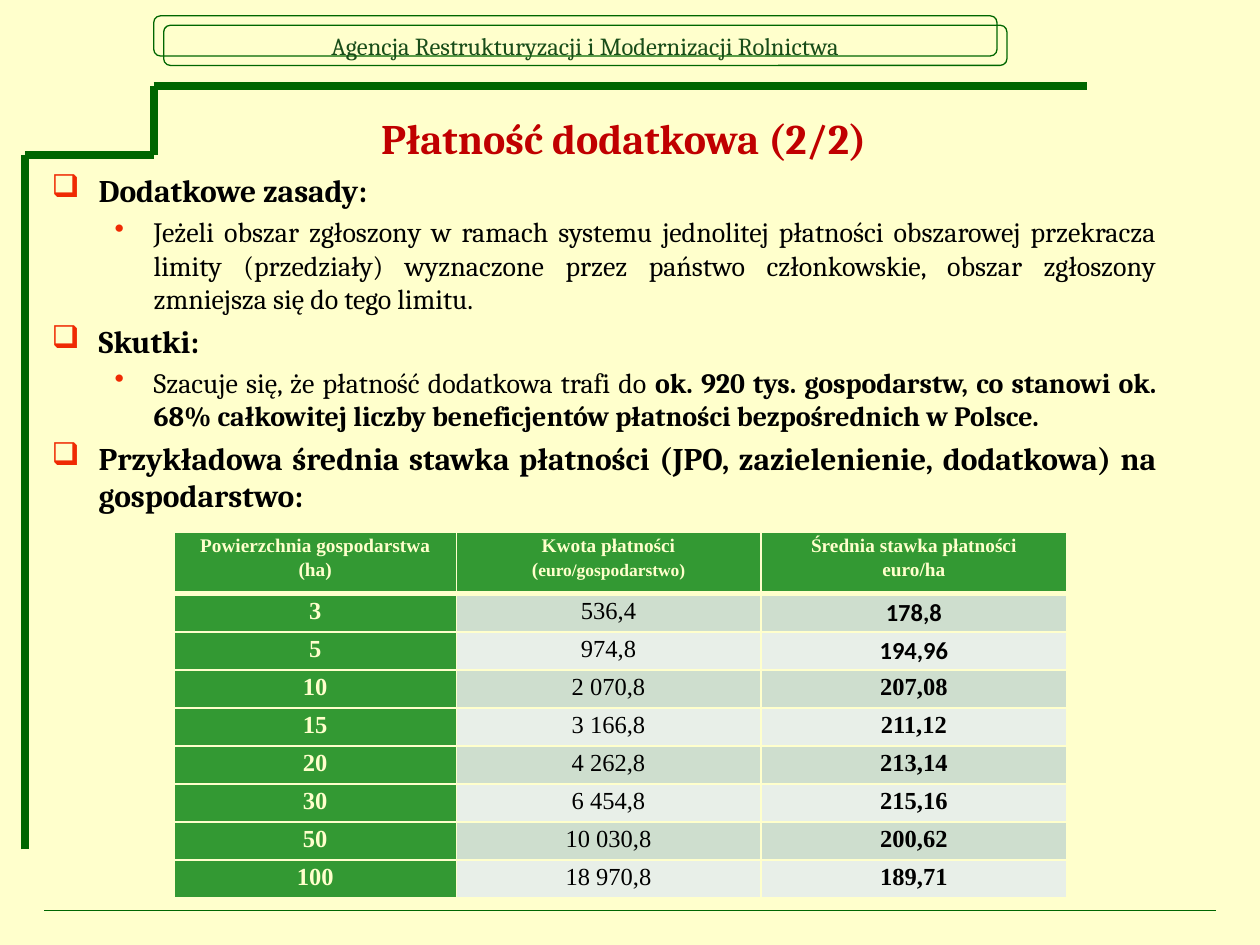
from itertools import pairwise

from lxml.etree import SubElement
from pptx import Presentation
from pptx.dml.color import RGBColor
from pptx.enum.shapes import MSO_CONNECTOR as Conn, MSO_SHAPE as Shape
from pptx.enum.text import MSO_ANCHOR as Anchor, PP_ALIGN as Align
from pptx.oxml.ns import qn
from pptx.util import Cm, Pt

GREEN, CREAM, RED, BLACK = "006600", "FFFFCC", "C00000", "000000"
SERIF, TIMES = "Cambria", "Times New Roman"

# Level: bullet, text indent (cm), hanging part (cm), text size
LEVELS = [("❑", 0.95, 0.95, 18), ("•", 2.06, 0.79, 16)]
# Each point: level, then (text, bold) runs
POINTS = [
    (0, [("Dodatkowe zasady:", True)]),
    (1, [("Jeżeli obszar zgłoszony w ramach systemu jednolitej płatności "
          "obszarowej przekracza limity (przedziały) wyznaczone przez państwo "
          "członkowskie, obszar zgłoszony zmniejsza się do tego limitu.", False)]),
    (0, [("Skutki:", True)]),
    (1, [("Szacuje się, że płatność dodatkowa trafi do ", False),
         ("ok. 920 tys. gospodarstw, co stanowi ok. 68% całkowitej liczby "
          "beneficjentów płatności bezpośrednich w Polsce.", True)]),
    (0, [("Przykładowa średnia stawka płatności (JPO, zazielenienie, "
          "dodatkowa) na gospodarstwo:", True)]),
]
HEADS = [
    [[("Powierzchnia gospodarstwa", 11)], [("(ha)", 11)]],
    [[("Kwota płatności", 11)], [("(", 11), ("euro/gospodarstwo)", 10)]],
    [[("Średnia stawka płatności", 11)], [("euro/ha", 11)]],
]
ROWS = [
    ("3", "536,4", "178,8"), ("5", "974,8", "194,96"),
    ("10", "2 070,8", "207,08"), ("15", "3 166,8", "211,12"),
    ("20", "4 262,8", "213,14"), ("30", "6 454,8", "215,16"),
    ("50", "10 030,8", "200,62"), ("100", "18 970,8", "189,71"),
]


def rgb(code):
    return RGBColor.from_string(code)


def style(font, size, color, bold=False, name=SERIF):
    font.name, font.size, font.bold = name, Pt(size), bold
    font.color.rgb = rgb(color)


def add_line(slide, start, end, width):
    line = slide.shapes.add_connector(
        Conn.STRAIGHT, *[Cm(v) for v in (*start, *end)])
    line.line.color.rgb = rgb(GREEN)
    line.line.width = Pt(width)
    SubElement(line._element.spPr, qn("a:effectLst"))


def add_frame(slide, left, top, width, height):
    # Stepped line down the left side
    step, drop = left + 2.59, top + 1.39
    spots = [(left, top + height), (left, drop), (step, drop),
             (step, top), (left + width, top)]
    for start, end in pairwise(spots):
        add_line(slide, start, end, 4.5)


def add_banner(slide, left, top, width, height):
    # Two offset outlines, the front one with the name
    for shift in (0, 1):
        box = slide.shapes.add_shape(
            Shape.ROUNDED_RECTANGLE, Cm(left + 0.2 * shift),
            Cm(top + 0.19 * shift), Cm(width), Cm(height))
        box.shadow.inherit = False
        box.fill.background()
        box.line.color.rgb = rgb(GREEN)
        box.line.width = Pt(0.75)
    frame = box.text_frame
    frame.word_wrap = False
    frame.vertical_anchor = Anchor.MIDDLE
    para = frame.paragraphs[0]
    para.text = "Agencja Restrukturyzacji i Modernizacji Rolnictwa"
    para.alignment = Align.CENTER
    style(para.font, 14, "194D19")


def add_text(slide, left, top, width, height):
    box = slide.shapes.add_textbox(Cm(left), Cm(top), Cm(width), Cm(height))
    box.text_frame.word_wrap = True
    return box.text_frame


def add_title(slide, *box):
    frame = add_text(slide, *box)
    frame.vertical_anchor = Anchor.MIDDLE
    para = frame.paragraphs[0]
    para.text = "Płatność dodatkowa (2/2)"
    para.alignment = Align.CENTER
    style(para.font, 24, RED, True)


def add_bullet(para, mark, indent, hang):
    props = para._p.get_or_add_pPr()
    props.set("marL", str(Cm(indent)))
    props.set("indent", str(-Cm(hang)))
    tint = SubElement(props, qn("a:buClr"))
    SubElement(tint, qn("a:srgbClr"), val="EF2A03")
    SubElement(props, qn("a:buChar"), char=mark)


def add_points(slide, *box):
    frame = add_text(slide, *box)
    for i, (level, runs) in enumerate(POINTS):
        para = frame.add_paragraph() if i else frame.paragraphs[0]
        mark, indent, hang, size = LEVELS[level]
        add_bullet(para, mark, indent, hang)
        para.level = level
        para.alignment = Align.JUSTIFY
        para.space_before = Pt(0.2 * size if i else 0)
        style(para.font, size, BLACK, runs[0][1])
        for text, bold in runs:
            run = para.add_run()
            run.text = text
            style(run.font, size, BLACK, bold)


def set_edges(cell, row):
    props = cell._tc.get_or_add_tcPr()
    for side in "LRTB":
        thick = (row, side) in ((0, "B"), (1, "T"))
        edge = SubElement(props, qn(f"a:ln{side}"), w=str(Pt(3 if thick else 1)))
        fill = SubElement(edge, qn("a:solidFill"))
        SubElement(fill, qn("a:srgbClr"), val=CREAM)


def fill_cell(cell, row, lines, back, color, bold, name):
    set_edges(cell, row)
    cell.fill.solid()
    cell.fill.fore_color.rgb = rgb(back)
    cell.margin_left = cell.margin_right = Cm(0.18)
    cell.margin_top = cell.margin_bottom = 0
    for i, runs in enumerate(lines):
        frame = cell.text_frame
        para = frame.add_paragraph() if i else frame.paragraphs[0]
        para.alignment = Align.CENTER
        para.line_spacing = 1.15
        for text, size in runs:
            run = para.add_run()
            run.text = text
            style(run.font, size, color, bold, name)


def add_rates(slide, left, top, width, height):
    table = slide.shapes.add_table(
        len(ROWS) + 1, len(HEADS), Cm(left), Cm(top), Cm(width), Cm(height)).table
    table.first_row = table.horz_banding = False
    for col, share in zip(table.columns, (0.316, 0.341, 0.343)):
        col.width = Cm(width * share)
    head = 1.25
    for i, row in enumerate(table.rows):
        row.height = Cm((height - head) / len(ROWS) if i else head)
    # Green head row and first column, banded values
    data = [HEADS] + [[[[(text, 14)]] for text in row] for row in ROWS]
    for i, row in enumerate(data):
        for j, lines in enumerate(row):
            green = i == 0 or j == 0
            back = "339933" if green else "CEDECE" if i % 2 else "E8EFE8"
            name = "Calibri" if j == 2 and i in (1, 2) else TIMES
            fill_cell(table.cell(i, j), i, lines, back,
                      CREAM if green else BLACK, green or j == 2, name)


def main():
    deck = Presentation()
    deck.slide_width, deck.slide_height = Cm(25.4), Cm(19.05)
    slide = deck.slides.add_slide(deck.slide_layouts[6])
    slide.background.fill.solid()
    slide.background.fill.fore_color.rgb = rgb(CREAM)
    add_frame(slide, 0.51, 1.73, 21.4, 15.39)
    add_banner(slide, 3.1, 0.32, 17, 0.81)
    add_line(slide, (0.89, 18.34), (24.51, 18.34), 0.25)
    add_title(slide, 1.78, 1.98, 21.59, 1.6)
    add_points(slide, 0.79, 3.33, 22.78, 14.94)
    add_rates(slide, 3.51, 10.72, 18, 7.39)
    deck.save("out.pptx")


if __name__ == "__main__":
    main()
